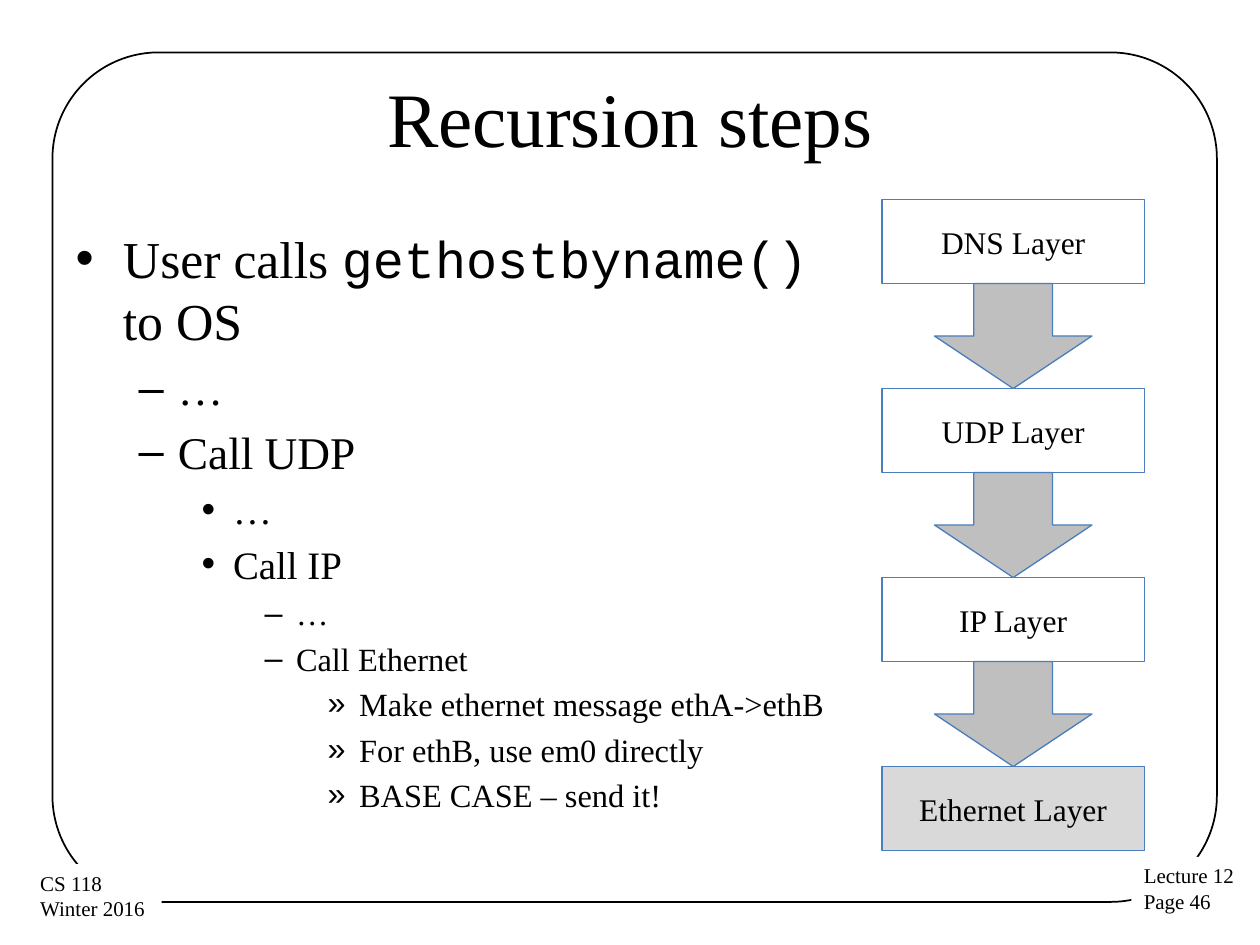
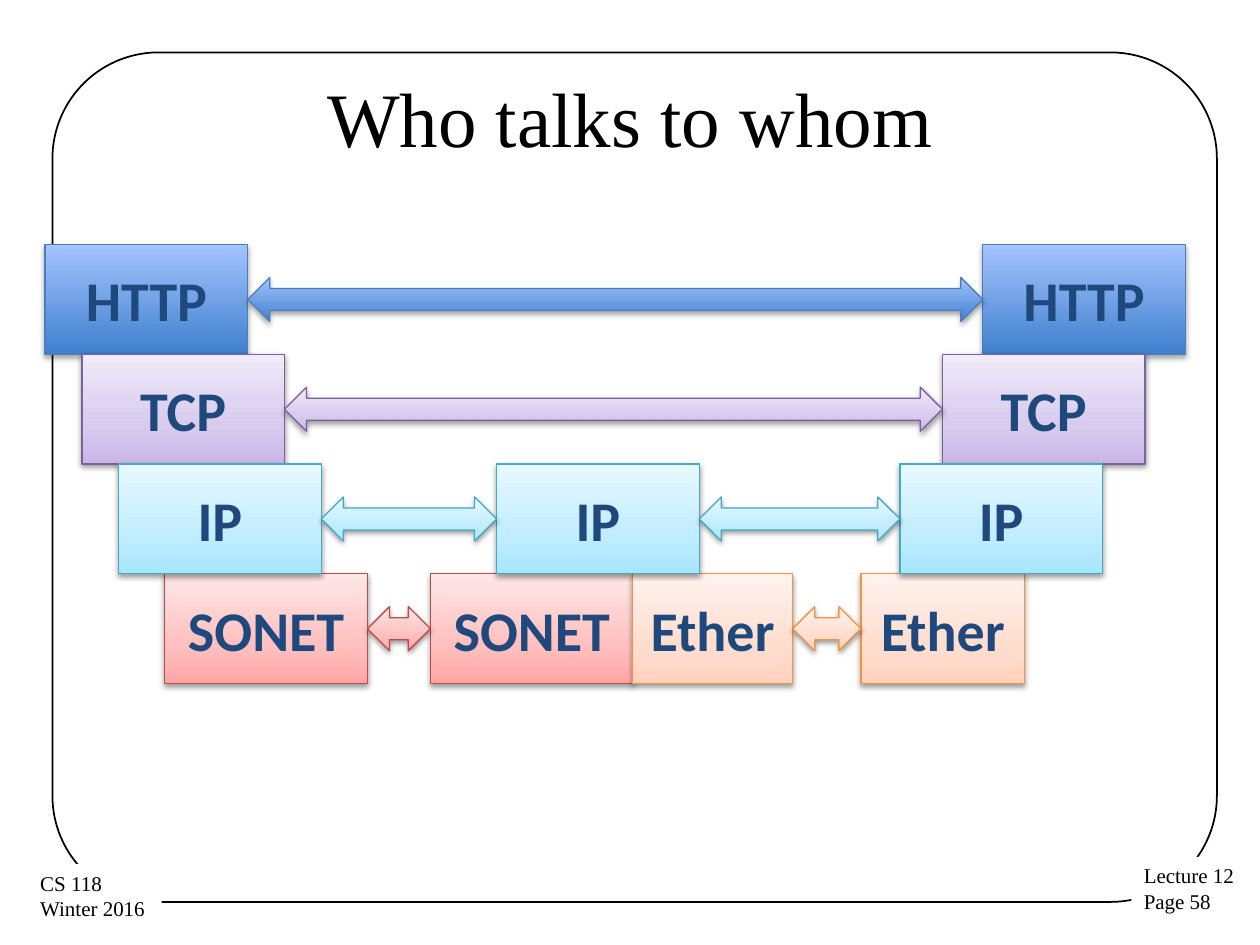
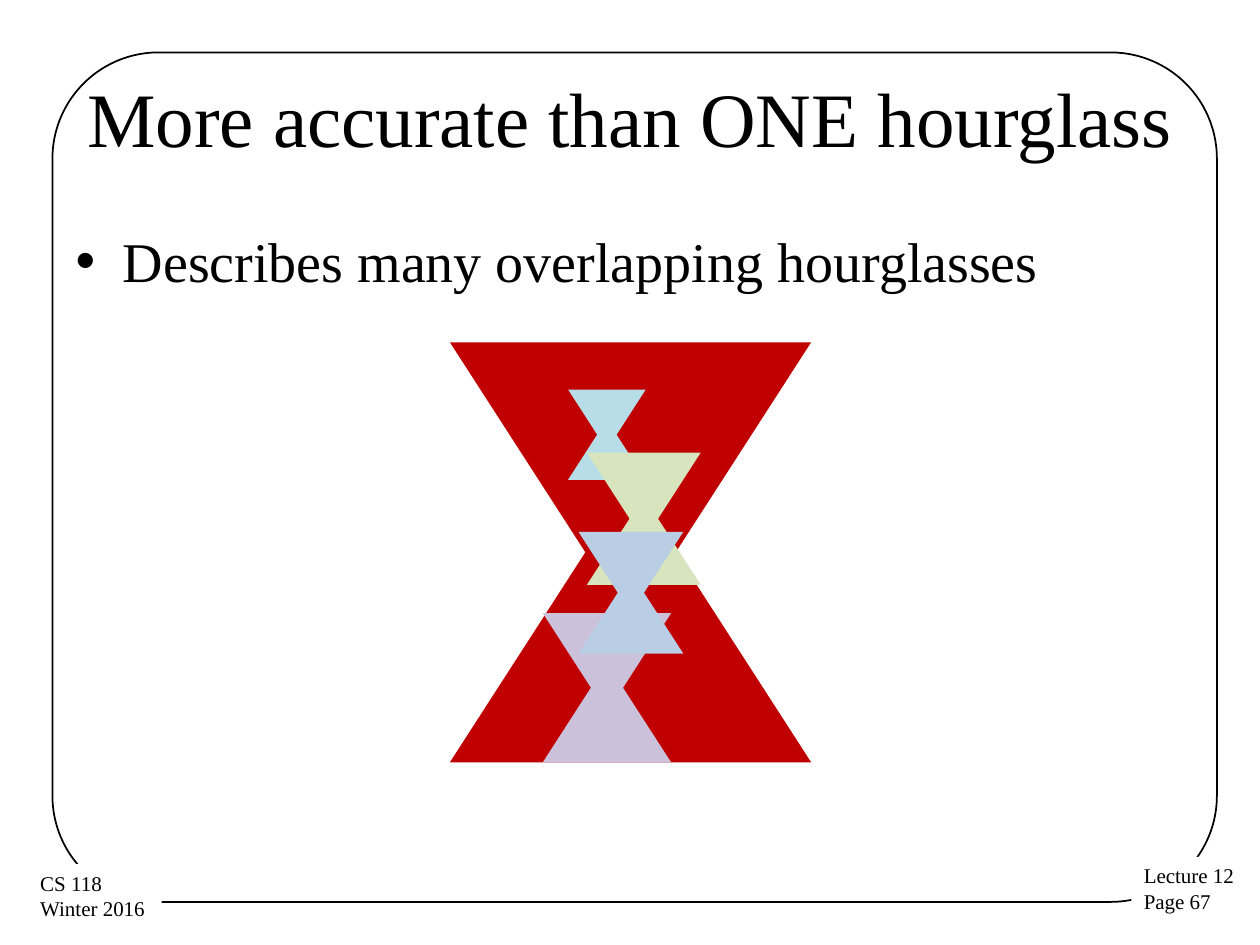
"""Build three networking lecture slides on a grid of 120 columns by 90 rows."""
from itertools import pairwise

from pptx import Presentation
from pptx.dml.color import RGBColor
from pptx.enum.shapes import MSO_SHAPE
from pptx.enum.text import MSO_ANCHOR, MSO_AUTO_SIZE, PP_ALIGN
from pptx.oxml import parse_xml
from pptx.oxml.ns import nsdecls
from pptx.util import Inches, Pt

COLORS = {
    "black": "000000", "white": "FFFFFF", "outline": "4B7EBC",
    "arrow": "BFBFBF", "base": "D9D9D9", "navy": "1F497D",
    "red": "C00000", "aqua": "B7DEE8", "purple": "CCC1DA",
    "green": "D7E4BD", "blue": "B9CDE5",
}
SERIF = "Times New Roman"

deck = Presentation()
deck.slide_width, deck.slide_height = Inches(10), Inches(7.5)
cell = deck.slide_width // 120


def add_block(shapes, kind, left, top, width, height, fill=None, line=None, weight=0.75):
    """Add a shape placed in grid cells, with a plain fill and line."""
    block = shapes.add_shape(kind, *(round(n * cell) for n in (left, top, width, height)))
    block.shadow.inherit = False
    if fill:
        block.fill.solid()
        block.fill.fore_color.rgb = RGBColor.from_string(fill)
    else:
        block.fill.background()
    if line:
        block.line.color.rgb = RGBColor.from_string(line)
        block.line.width = Pt(weight)
    else:
        block.line.fill.background()
    return block


def write_label(block, text, size, font=SERIF, color="black", align=PP_ALIGN.CENTER, bold=False):
    """Write text into a shape, one paragraph a line."""
    block.text_frame.text = text
    block.text_frame.vertical_anchor = MSO_ANCHOR.MIDDLE
    for para in block.text_frame.paragraphs:
        para.alignment = align
        para.font.name, para.font.size, para.font.bold = font, Pt(size), bold
        para.font.color.rgb = RGBColor.from_string(COLORS[color])


slides = []
for title, number, layout in [
    ("Recursion steps", 46, 1),
    ("Who talks to whom", 58, 5),
    ("More accurate than ONE hourglass", 67, 1),
]:
    page = deck.slides.add_slide(deck.slide_layouts[layout])
    slides.append(page)
    frame = add_block(page.shapes, MSO_SHAPE.ROUNDED_RECTANGLE, 5, 5, 110.9, 80.9,
                      line=COLORS["black"], weight=1)
    frame.adjustments[0] = 0.125
    for text, left, top, width in [
        (f"Lecture 12\nPage {number}", 107.75, 81.6, 11.2),
        ("CS 118\nWinter 2016", 2.65, 82.3, 12.75),
    ]:
        footer = add_block(page.shapes, MSO_SHAPE.RECTANGLE, left, top, width, 6.1, COLORS["white"])
        write_label(footer, text, 12, align=PP_ALIGN.LEFT)
        footer.text_frame.vertical_anchor = MSO_ANCHOR.TOP
        footer.text_frame.word_wrap = False
    heading = page.shapes.title
    heading.left, heading.top, heading.width, heading.height = (
        round(n * cell) for n in (6, 3.6, 108, 15))
    write_label(heading, title, 44)

recursion, talkers, hourglasses = slides

for page, width in [(recursion, 77), (hourglasses, 108)]:
    body = page.placeholders[1]
    body.left, body.top, body.width, body.height = (
        round(n * cell) for n in (6, 21, width, 59.4))
    body.text_frame.auto_size = MSO_AUTO_SIZE.NONE

level_sizes = [29.6, 25.9, 22.2, 18.5, 18.5]
steps = recursion.placeholders[1].text_frame
for index, (level, spans) in enumerate([
    (0, ["User calls ", "gethostbyname()", " to OS"]),
    (1, ["…"]),
    (1, ["Call UDP"]),
    (2, ["…"]),
    (2, ["Call IP"]),
    (3, ["…"]),
    (3, ["Call Ethernet"]),
    (4, ["Make ethernet message ethA->ethB"]),
    (4, ["For ethB, use em0 directly"]),
    (4, ["BASE CASE – send it!"]),
]):
    para = steps.add_paragraph() if index else steps.paragraphs[0]
    para.level = level
    para.font.name, para.font.size = SERIF, Pt(level_sizes[level])
    for text in spans:
        span = para.add_run()
        span.text = text
        if text.endswith("()"):
            span.font.name = "Courier New"

layer_names = ["DNS", "UDP", "IP", "Ethernet"]
for row, name in enumerate(layer_names):
    top = 19 + 18 * row
    is_base = row == len(layer_names) - 1
    box = add_block(recursion.shapes, MSO_SHAPE.RECTANGLE, 84, top, 25, 8,
                    COLORS["base" if is_base else "white"], COLORS["outline"])
    write_label(box, f"{name} Layer", 18)
    if not is_base:
        add_block(recursion.shapes, MSO_SHAPE.DOWN_ARROW, 89, top + 8, 15, 10,
                  COLORS["arrow"], COLORS["outline"])

box_height, arrow_height = 10.45, 4.2
protocols = [
    ("HTTP", 0, "4B7EBC", {0: "3F80CE", 100: "A4C4FF"}, [(4.3, 19.3), (93.6, 19.3)]),
    ("TCP", 1, "7D60A0", {0: "C9B5E8", 35: "D8CBEE", 100: "F0EAF9"},
     [(7.8, 19.3), (89.75, 19.3)]),
    ("SONET", 3, "BF4C48", {0: "FFA6A5", 35: "FFC0BF", 100: "FFE7E7"},
     [(15.7, 19.3), (41, 19.3)]),
    ("Ether", 3, "F69240", {0: "FFD2BD", 35: "FFDED0", 100: "FFF2ED"},
     [(60.25, 15.25), (82, 15.6)]),
    ("IP", 2, "46AAC5", {0: "A7E6FF", 35: "C1EDFF", 100: "E7F8FF"},
     [(11.3, 19.3), (47.3, 19.3), (85.7, 19.3)]),
]
for name, row, line, stops, boxes in protocols:
    top = 23.3 + box_height * row
    blocks = []
    for left, width in boxes:
        box = add_block(talkers.shapes, MSO_SHAPE.RECTANGLE, left, top, width, box_height, line=line)
        write_label(box, name, 32, "Calibri", "navy", bold=True)
        blocks.append(box)
    for (left, width), (next_left, _) in pairwise(boxes):
        start = left + width
        blocks.append(add_block(
            talkers.shapes, MSO_SHAPE.LEFT_RIGHT_ARROW, start,
            top + (box_height - arrow_height) / 2, next_left - start, arrow_height, line=line))
    stop_list = "".join(
        f'<a:gs pos="{share * 1000}"><a:srgbClr val="{color}"/></a:gs>'
        for share, color in stops.items())
    distance, opacity = (23000, 35000) if name == "HTTP" else (20000, 38000)
    for block in blocks:
        properties = block._element.spPr
        no_fill = properties.find("{*}noFill")
        properties.replace(no_fill, parse_xml(
            f'<a:gradFill {nsdecls("a")} rotWithShape="1"><a:gsLst>{stop_list}</a:gsLst>'
            '<a:lin ang="16200000" scaled="0"/></a:gradFill>'))
        properties.find("{*}effectLst").append(parse_xml(
            f'<a:outerShdw {nsdecls("a")} blurRad="40000" dist="{distance}" dir="5400000" '
            f'rotWithShape="0"><a:srgbClr val="000000"><a:alpha val="{opacity}"/>'
            '</a:srgbClr></a:outerShdw>'))

summary = hourglasses.placeholders[1].text_frame
summary.text = "Describes many overlapping hourglasses"
summary.paragraphs[0].font.name = SERIF
summary.paragraphs[0].font.size = Pt(32)
for color, left, top, height in [
    ("red", 42.85, 32.6, 40),
    ("aqua", 54.1, 37.1, 8.6),
    ("purple", 51.7, 58.4, 14.2),
    ("green", 55.9, 43.1, 12.6),
    ("blue", 55.1, 50.65, 11.6),
]:
    hourglass = hourglasses.shapes.add_group_shape()
    for offset, rotation in [(height / 3, 0), (0, 180)]:
        half = add_block(hourglass.shapes, MSO_SHAPE.ISOSCELES_TRIANGLE, left, top + offset,
                         height * 0.86, height * 2 / 3, COLORS[color])
        half.rotation = rotation

deck.save("out.pptx")
